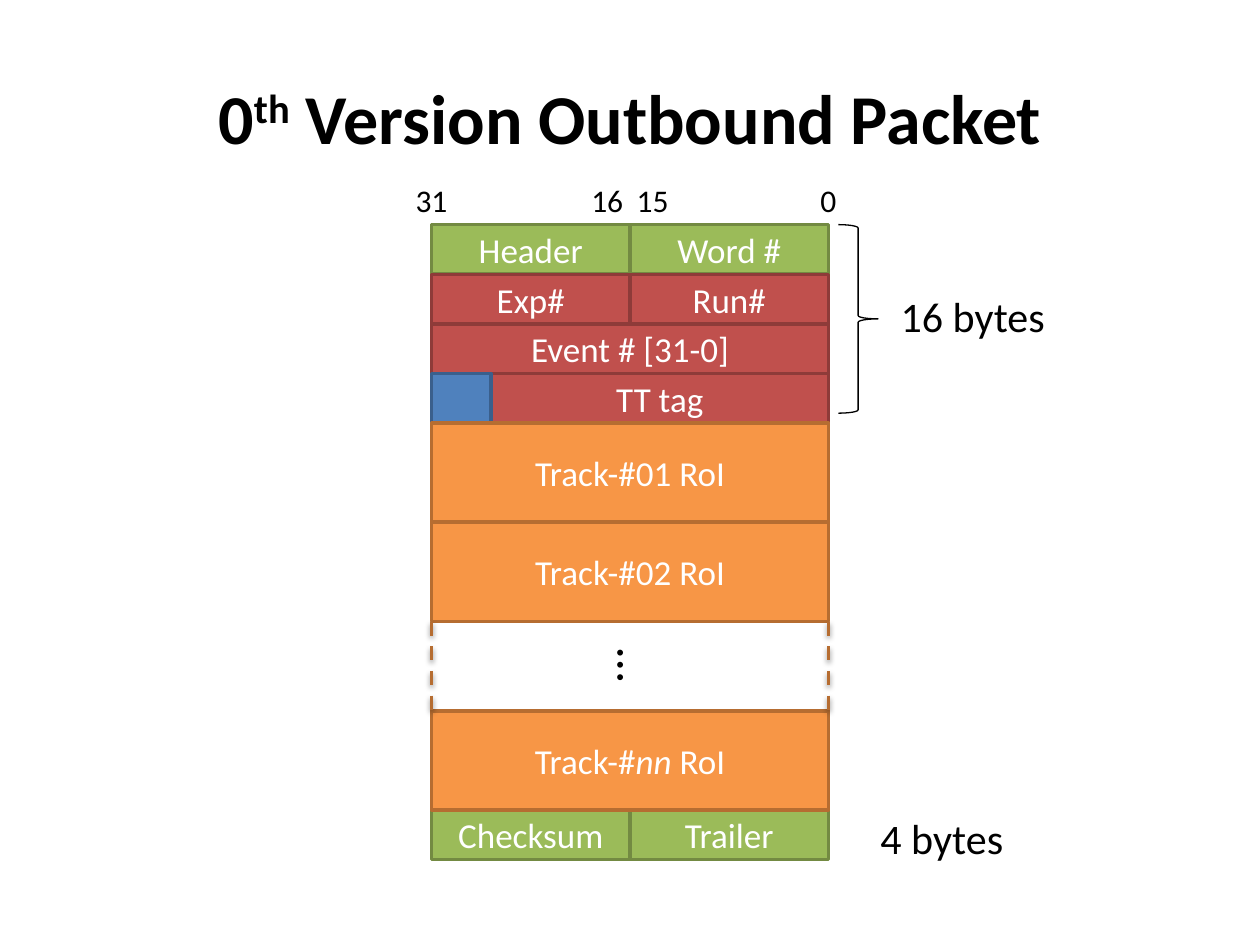
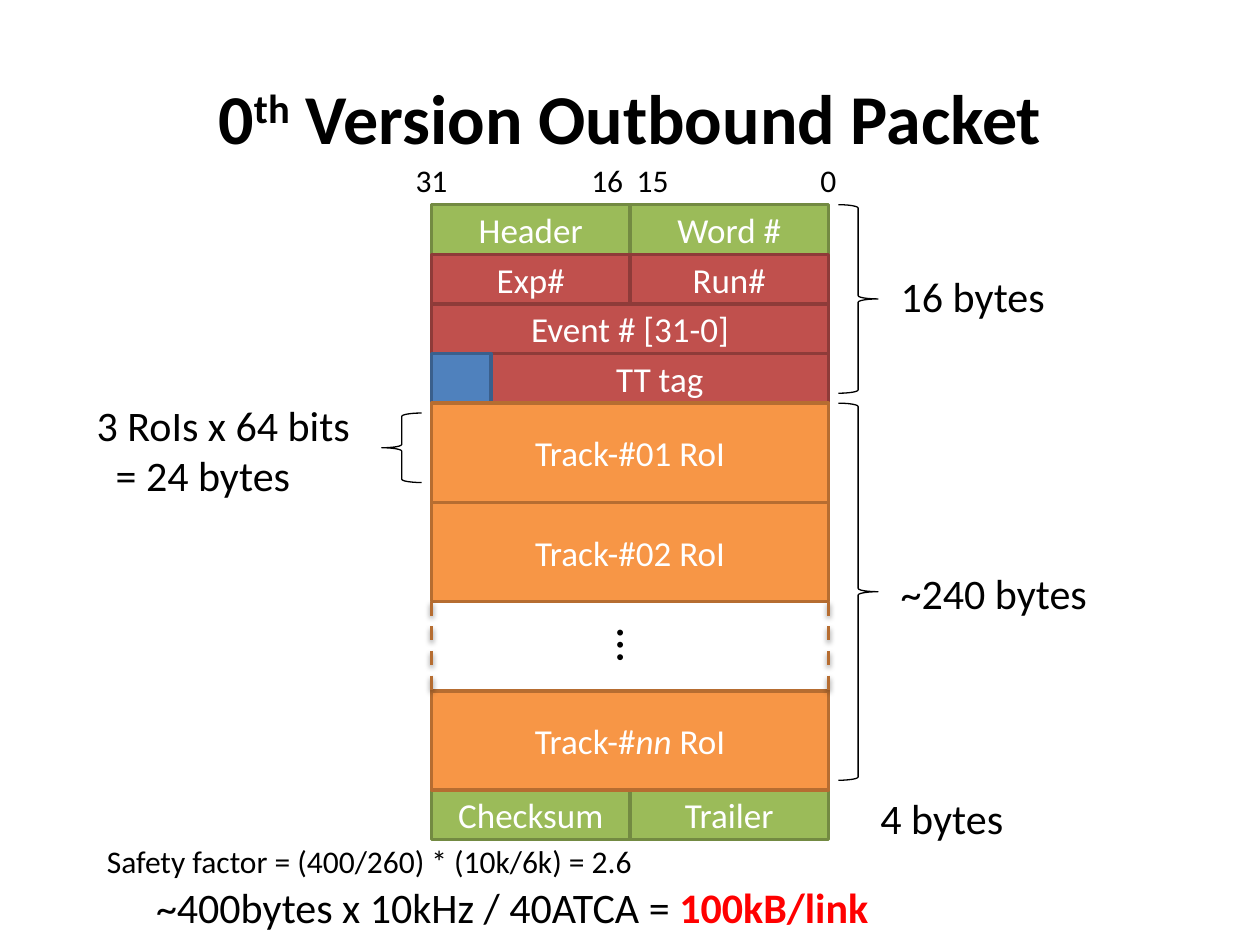
"""Build two slides describing the layout of the outbound data packet."""
from dataclasses import dataclass

from lxml.etree import SubElement
from pptx import Presentation
from pptx.dml.color import RGBColor
from pptx.enum.dml import MSO_LINE
from pptx.enum.shapes import MSO_CONNECTOR, MSO_SHAPE
from pptx.enum.text import MSO_ANCHOR, MSO_AUTO_SIZE, PP_ALIGN
from pptx.oxml.ns import qn
from pptx.util import Pt

FONT = "Calibri"
COLOURS = {
    "black": "000000", "white": "FFFFFF", "red": "FF0000",
    "frame": "9BBB59", "frame edge": "738A42",
    "event": "C0504D", "event edge": "8E3B39",
    "spare": "4F81BD", "spare edge": "3A5F8C",
    "track": "F79646", "track edge": "B66D31",
}
MODULE = 28.35
PACKET_LEFT = 246.6
PACKET_COLUMNS = 8
GAP_ROW, GAP_END = 8, 9.8


@dataclass(frozen=True)
class Span:
    text: str
    bold: bool = False
    italic: bool = False
    colour: str = "black"
    baseline: int = 0


@dataclass(frozen=True)
class Field:
    """A packet field, measured in modules from the packet's top left."""
    row: float
    column: float
    columns: float
    colour: str
    spans: tuple[Span, ...] = ()
    rows: float = 1


@dataclass(frozen=True)
class Brace:
    """A brace, measured in modules from the packet's top left."""
    row: float
    rows: float
    column: float = 8.2
    flipped: bool = True


@dataclass(frozen=True)
class Note:
    """A text box in points, with its top measured from the packet's top."""
    left: float
    top: float
    width: float
    height: float
    lines: tuple[tuple[Span, ...], ...]
    size: float = 24
    centred: bool = False
    rotation: float = 0
    second_indent: float = 0


def field(row: float, column: float, columns: float, colour: str, text: str, rows: float = 1) -> Field:
    return Field(row, column, columns, colour, (Span(text, colour="white"),), rows)


def plain(text: str) -> tuple[tuple[Span, ...], ...]:
    return ((Span(text),),)


def bit_label(text: str, centre: float, width: float = 33.1) -> Note:
    return Note(centre - width / 2, -MODULE, width, 29.1, plain(text), 18, centred=True)


TITLE = (Span("0", bold=True), Span("th", bold=True, baseline=30000),
         Span(" Version Outbound Packet", bold=True))
TRACK_NN = (Span("Track-#", colour="white"), Span("nn ", italic=True, colour="white"),
            Span("RoI", colour="white"))
FIELDS = (
    field(0, 0, 4, "frame", "Header"),
    field(0, 4, 4, "frame", "Word #"),
    field(11.8, 0, 4, "frame", "Checksum"),
    field(11.8, 4, 4, "frame", "Trailer"),
    field(1, 0, 4, "event", "Exp#"),
    field(1, 4, 4, "event", "Run#"),
    field(2, 0, 8, "event", "Event # [31-0]"),
    field(3, 1.2, 6.8, "event", "TT tag"),
    Field(3, 0, 1.2, "spare"),
    field(4, 0, 8, "track", "Track-#01 RoI", 2),
    field(6, 0, 8, "track", "Track-#02 RoI", 2),
    Field(GAP_END, 0, 8, "track", TRACK_NN, 2),
)
PACKET_MIDDLE = PACKET_LEFT + PACKET_COLUMNS * MODULE / 2
PACKET_RIGHT = PACKET_LEFT + PACKET_COLUMNS * MODULE
NOTES = (
    bit_label("31", PACKET_LEFT),
    bit_label("16", PACKET_MIDDLE - 13),
    bit_label("15", PACKET_MIDDLE + 13),
    bit_label("0", PACKET_RIGHT, 23.8),
    Note(347, 231.6, 33.8, 41, plain("…"), 28, rotation=90),
    Note(507.6, 33.8, 98, 36, plain("16 bytes")),
    Note(496, 332.4, 85.7, 36, plain("4 bytes")),
)
HEADER_BRACE = Brace(0, 3.8)
SIZE_BRACES = (Brace(4.2, 1.4, column=-1, flipped=False), Brace(4, 7.6))
SIZE_NOTES = (
    Note(48.2, 107.6, 160.6, 65.5,
         ((Span("3 RoIs x 64 bits"),), (Span("= 24 bytes"),)), second_indent=10.85),
    Note(507.6, 204, 121.7, 36, plain("~240 bytes")),
    Note(82.1, 383.4, 424.8, 36,
         ((Span("~400bytes x 10kHz / 40ATCA = "), Span("100kB/link", bold=True, colour="red")),)),
    Note(54, 360.4, 321, 29.1, plain("Safety factor = (400/260) * (10k/6k) = 2.6"), 18),
)


def rgb(name: str) -> RGBColor:
    return RGBColor.from_string(COLOURS[name])


def write_run(para, text: str, *, size: float, bold: bool = False, italic: bool = False,
              colour: str = "black", baseline: int = 0) -> None:
    run = para.add_run()
    run.text = text
    run.font.name = FONT
    run.font.size = Pt(size)
    run.font.bold = bold
    run.font.italic = italic
    run.font.color.rgb = rgb(colour)
    if baseline:
        run.font._element.set("baseline", str(baseline))


def write_spans(para, spans: tuple[Span, ...], size: float) -> None:
    for span in spans:
        write_run(para, span.text, size=size, bold=span.bold, italic=span.italic,
                  colour=span.colour, baseline=span.baseline)


def draw_field(page, item: Field, top: float) -> None:
    box = page.shapes.add_shape(
        MSO_SHAPE.RECTANGLE, Pt(PACKET_LEFT + item.column * MODULE), Pt(top + item.row * MODULE),
        Pt(item.columns * MODULE), Pt(item.rows * MODULE))
    box.shadow.inherit = False
    box.fill.solid()
    box.fill.fore_color.rgb = rgb(item.colour)
    box.line.color.rgb = rgb(f"{item.colour} edge")
    box.line.width = Pt(2)
    box.text_frame.vertical_anchor = MSO_ANCHOR.MIDDLE
    para = box.text_frame.paragraphs[0]
    para.alignment = PP_ALIGN.CENTER
    write_spans(para, item.spans, 20)


def draw_gap_side(page, x: float, top: float) -> None:
    side = page.shapes.add_connector(
        MSO_CONNECTOR.STRAIGHT, Pt(x), Pt(top + GAP_ROW * MODULE),
        Pt(x), Pt(top + GAP_END * MODULE))
    side.line.color.rgb = rgb("track edge")
    side.line.width = Pt(2)
    side.line.dash_style = MSO_LINE.DASH
    effects = SubElement(side._element.spPr, qn("a:effectLst"))
    shadow = SubElement(effects, qn("a:outerShdw"), blurRad=str(Pt(3.1)), dist=str(Pt(1.6)),
                        dir="5400000", rotWithShape="0")
    shade = SubElement(shadow, qn("a:srgbClr"), val=COLOURS["black"])
    SubElement(shade, qn("a:alpha"), val="38000")


def draw_brace(page, item: Brace, top: float) -> None:
    brace = page.shapes.add_shape(
        MSO_SHAPE.LEFT_BRACE, Pt(PACKET_LEFT + item.column * MODULE), Pt(top + item.row * MODULE),
        Pt(0.8 * MODULE), Pt(item.rows * MODULE))
    brace.shadow.inherit = False
    brace.fill.background()
    brace.line.color.rgb = rgb("black")
    brace.line.width = Pt(0.75)
    if item.flipped:
        brace._element.spPr.xfrm.set("flipH", "1")


def draw_note(page, item: Note, top: float) -> None:
    box = page.shapes.add_textbox(Pt(item.left), Pt(top + item.top), Pt(item.width), Pt(item.height))
    box.rotation = item.rotation
    frame = box.text_frame
    frame.word_wrap = False
    frame.auto_size = MSO_AUTO_SIZE.SHAPE_TO_FIT_TEXT
    for index, spans in enumerate(item.lines):
        para = frame.add_paragraph() if index else frame.paragraphs[0]
        para.alignment = PP_ALIGN.CENTER if item.centred else PP_ALIGN.LEFT
        if index and item.second_indent:
            para._p.get_or_add_pPr().set("marL", str(Pt(item.second_indent)))
        write_spans(para, spans, item.size)


def add_packet_page(deck, top: float, braces: tuple[Brace, ...] = (),
                    notes: tuple[Note, ...] = ()) -> None:
    page = deck.slides.add_slide(deck.slide_layouts[5])
    title = page.shapes.title
    title.left, title.top, title.width, title.height = Pt(36), Pt(21.6), Pt(648), Pt(90)
    title.text_frame.vertical_anchor = MSO_ANCHOR.MIDDLE
    para = title.text_frame.paragraphs[0]
    para.alignment = PP_ALIGN.CENTER
    write_spans(para, TITLE, 40)
    for item in FIELDS:
        draw_field(page, item, top)
    for x in (PACKET_LEFT, PACKET_RIGHT):
        draw_gap_side(page, x, top)
    for brace in (HEADER_BRACE, *braces):
        draw_brace(page, brace, top)
    for note in (*NOTES, *notes):
        draw_note(page, note, top)


def main() -> None:
    deck = Presentation()
    deck.slide_width, deck.slide_height = Pt(720), Pt(540)
    add_packet_page(deck, 128.4)
    add_packet_page(deck, 117, SIZE_BRACES, SIZE_NOTES)
    deck.save("out.pptx")


if __name__ == "__main__":
    main()
